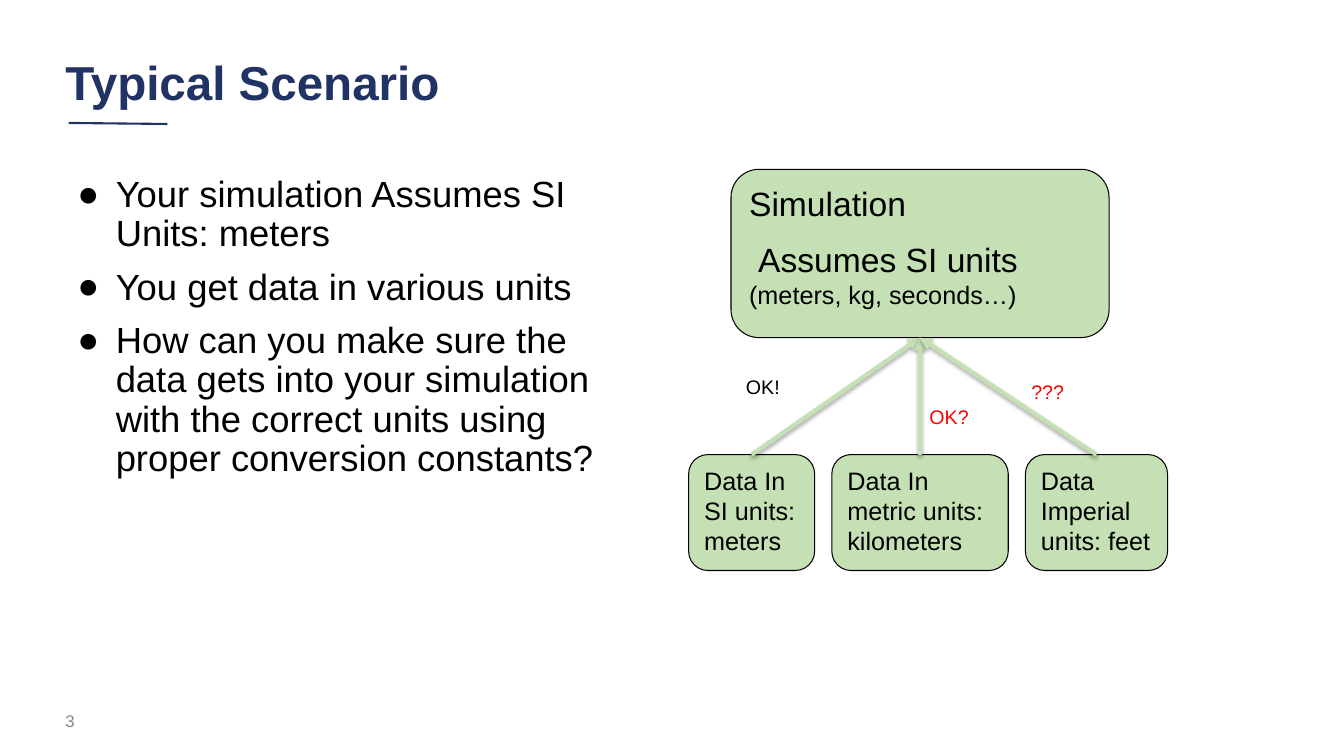
from lxml.etree import SubElement
from pptx import Presentation
from pptx.dml.color import RGBColor
from pptx.enum.shapes import MSO_CONNECTOR, MSO_SHAPE
from pptx.enum.text import MSO_ANCHOR, PP_ALIGN
from pptx.oxml.ns import qn
from pptx.util import Inches, Pt

NAVY, GREEN, BLACK, RED, GRAY = "213265", "C5E0B4", "000000", "FF0000", "888888"


def color(hex_string):
    """Turn a hex string into a colour."""
    return RGBColor.from_string(hex_string)


def add_run(paragraph, text, size, hex_color=BLACK, bold=False):
    """Add one formatted run to a paragraph."""
    run = paragraph.add_run()
    run.text = text
    run.font.name = "Arial"
    run.font.size = Pt(size)
    run.font.bold = bold
    run.font.color.rgb = color(hex_color)


def add_text_box(slide, left, top, width, height, anchor=MSO_ANCHOR.TOP):
    """Add a wrapping text box and return its text frame."""
    box = slide.shapes.add_textbox(Inches(left), Inches(top), Inches(width), Inches(height))
    box.text_frame.word_wrap = True
    box.text_frame.vertical_anchor = anchor
    return box.text_frame


def add_label(slide, left, top, width, text, hex_color):
    """Add a small label beside an arrow."""
    frame = add_text_box(slide, left, top, width, 0.34)
    add_run(frame.paragraphs[0], text, 14, hex_color)


def add_bullets(slide, texts):
    """Add the bulleted body text."""
    frame = add_text_box(slide, 0.55, 1.7, 5.93, 4.76)
    for index, text in enumerate(texts):
        paragraph = frame.add_paragraph() if index else frame.paragraphs[0]
        paragraph.line_spacing = 0.9
        if index:
            paragraph.space_before = Pt(10)
        properties = paragraph._p.get_or_add_pPr()
        properties.set("marL", str(Inches(0.5)))
        properties.set("indent", str(Inches(-0.38)))
        bullet_color = SubElement(properties, qn("a:buClr"))
        SubElement(bullet_color, qn("a:srgbClr"), val=BLACK)
        SubElement(properties, qn("a:buFont"), typeface="Arial")
        SubElement(properties, qn("a:buChar"), char="●")
        add_run(paragraph, text, 26)


def add_rounded_box(slide, left, top, width, height):
    """Add a green rounded box and return its text frame."""
    shape = slide.shapes.add_shape(
        MSO_SHAPE.ROUNDED_RECTANGLE, Inches(left), Inches(top), Inches(width), Inches(height))
    shape.shadow.inherit = False
    shape.fill.solid()
    shape.fill.fore_color.rgb = color(GREEN)
    shape.line.color.rgb = color(BLACK)
    shape.line.width = Pt(0.75)
    frame = shape.text_frame
    frame.word_wrap = True
    frame.vertical_anchor = MSO_ANCHOR.TOP
    frame.paragraphs[0].alignment = PP_ALIGN.LEFT
    return frame


def add_line(slide, start, end, hex_color, width):
    """Add a straight line; return it with its empty effect list."""
    line = slide.shapes.add_connector(
        MSO_CONNECTOR.STRAIGHT, *(Inches(value) for value in (*start, *end)))
    line.line.color.rgb = color(hex_color)
    line.line.width = Pt(width)
    effects = SubElement(line._element.spPr, qn("a:effectLst"))
    return line, effects


def add_arrow(slide, start, end):
    """Add a green arrow with a soft shadow below it."""
    arrow, effects = add_line(slide, start, end, GREEN, 3)
    SubElement(arrow.line._get_or_add_ln(), qn("a:tailEnd"), type="triangle")
    shadow = SubElement(effects, qn("a:outerShdw"), blurRad=str(Pt(3.1)),
                        dist=str(Pt(1.8)), dir="5400000", rotWithShape="0")
    shadow_color = SubElement(shadow, qn("a:srgbClr"), val=BLACK)
    SubElement(shadow_color, qn("a:alpha"), val="35000")


def add_simulation(slide):
    """Add the simulation box with its assumption."""
    frame = add_rounded_box(slide, 7.25, 1.68, 3.75, 1.67)
    add_run(frame.paragraphs[0], "Simulation", 24)
    assumption = frame.add_paragraph()
    assumption.alignment = PP_ALIGN.LEFT
    assumption.space_before = Pt(11.5)
    assumption._p.get_or_add_pPr().set("indent", str(Inches(0.09)))
    add_run(assumption, "Assumes SI units", 24)
    assumption.add_line_break()
    add_run(assumption, "(meters, kg, seconds…)", 18)


def add_data_source(slide, left, width, text):
    """Add a data box and its arrow to the simulation."""
    top = 4.51
    frame = add_rounded_box(slide, left, top, width, 1.15)
    add_run(frame.paragraphs[0], text, 18)
    add_arrow(slide, (left + width / 2, top), (9.125, 3.35))


def main():
    """Build and save the slide."""
    presentation = Presentation()
    presentation.slide_width = Inches(13.33)
    presentation.slide_height = Inches(7.5)
    slide = presentation.slides.add_slide(presentation.slide_layouts[6])

    add_line(slide, (0.68, 1.22), (1.66, 1.23), NAVY, 1.5)
    number = add_text_box(slide, 0.55, 6.95, 3, 0.4, MSO_ANCHOR.MIDDLE)
    add_run(number.paragraphs[0], "3", 12, GRAY)
    title = add_text_box(slide, 0.55, 0.46, 11.12, 0.76, MSO_ANCHOR.MIDDLE)
    title.paragraphs[0].line_spacing = 0.9
    add_run(title.paragraphs[0], "Typical Scenario", 34, NAVY, bold=True)
    add_bullets(slide, [
        "Your simulation Assumes SI Units: meters",
        "You get data in various units",
        "How can you make sure the data gets into your simulation "
        "with the correct units using proper conversion constants?",
    ])

    add_simulation(slide)
    for left, width, text in [
        (6.83, 1.25, "Data In SI units: meters"),
        (8.25, 1.75, "Data In metric units: kilometers"),
        (10.17, 1.41, "Data Imperial units: feet"),
    ]:
        add_data_source(slide, left, width, text)
    add_label(slide, 7.3, 3.67, 0.83, "OK!", BLACK)
    add_label(slide, 9.12, 3.97, 0.99, "OK?", RED)
    add_label(slide, 10.13, 3.72, 0.99, "???", RED)

    presentation.save("out.pptx")


if __name__ == "__main__":
    main()
